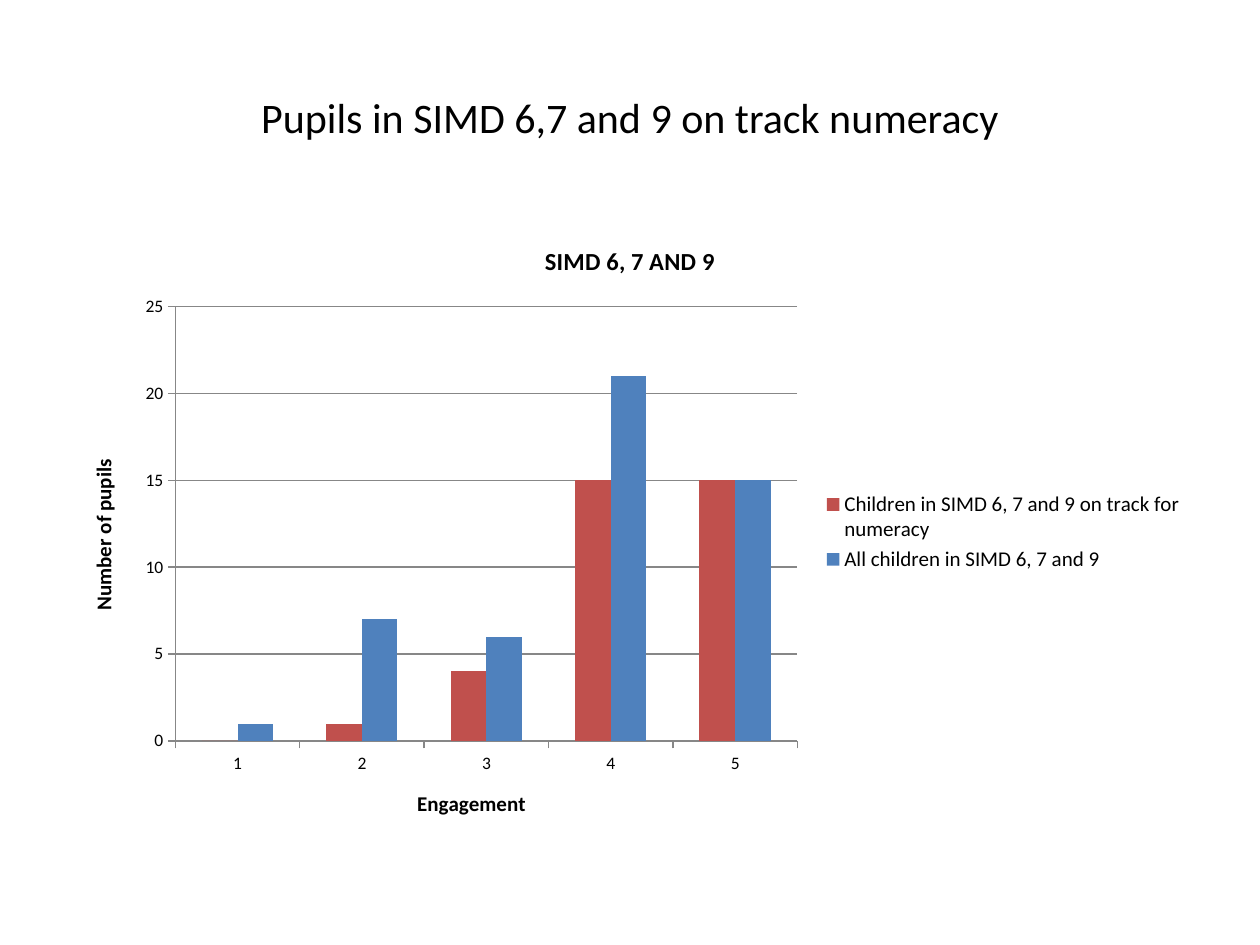
from pptx import Presentation
from pptx.chart.data import CategoryChartData
from pptx.dml.color import RGBColor
from pptx.enum.chart import XL_CHART_TYPE, XL_LEGEND_POSITION, XL_TICK_MARK
from pptx.enum.text import MSO_ANCHOR, PP_ALIGN
from pptx.util import Pt

EMU_PER_PX = 914400 / 126


def px(length):
    return round(length * EMU_PER_PX)


def colour(value):
    return RGBColor.from_string(value)


class SlideBuilder:
    face = "Calibri"
    ink = "000000"
    rule = "878787"

    def __init__(self, presentation):
        self.slide = presentation.slides.add_slide(presentation.slide_layouts[5])

    def style(self, font, size, bold=False):
        font.name = self.face
        font.size = Pt(size)
        font.bold = bold
        font.color.rgb = colour(self.ink)

    def add_text(self, frame, wording, size, bold=False):
        paragraph = frame.paragraphs[0]
        run = paragraph.add_run()
        run.text = wording
        self.style(run.font, size, bold)
        return paragraph

    def title(self, wording, left, top, width, height, size):
        heading = self.slide.shapes.title
        heading.left, heading.top = px(left), px(top)
        heading.width, heading.height = px(width), px(height)
        heading.text_frame.vertical_anchor = MSO_ANCHOR.MIDDLE
        self.add_text(heading.text_frame, wording, size).alignment = PP_ALIGN.CENTER

    def axis(self, axis, wording):
        self.add_text(axis.axis_title.text_frame, wording, 12, True)
        self.style(axis.tick_labels.font, 10)
        axis.major_tick_mark = XL_TICK_MARK.OUTSIDE
        axis.minor_tick_mark = XL_TICK_MARK.NONE
        self.line(axis.format.line)

    def line(self, line):
        line.color.rgb = colour(self.rule)
        line.width = Pt(0.75)

    def column_chart(self, heading, categories, series, axis_titles, left, top, width, height):
        data = CategoryChartData(number_format="General")
        data.categories = categories
        for name, counts, _ in series:
            data.add_series(name, counts)
        chart = self.slide.shapes.add_chart(
            XL_CHART_TYPE.COLUMN_CLUSTERED, px(left), px(top), px(width), px(height), data
        ).chart
        self.style(chart.font, 10)
        chart.has_title = True
        self.add_text(chart.chart_title.text_frame, heading, 14, True)
        chart.chart_title.include_in_layout = False
        chart.has_legend = True
        chart.legend.position = XL_LEGEND_POSITION.RIGHT
        chart.legend.include_in_layout = False
        self.style(chart.legend.font, 12)
        for axis, wording in zip((chart.category_axis, chart.value_axis), axis_titles):
            self.axis(axis, wording)
        chart.value_axis.minimum_scale = 0
        chart.value_axis.maximum_scale = 25
        chart.value_axis.major_unit = 5
        chart.value_axis.has_major_gridlines = True
        self.line(chart.value_axis.major_gridlines.format.line)
        plot = chart.plots[0]
        plot.gap_width = 150
        plot.overlap = 0
        plot.vary_by_categories = False
        for columns, (_, _, fill) in zip(plot.series, series):
            columns.invert_if_negative = False
            columns.format.fill.solid()
            columns.format.fill.fore_color.rgb = colour(fill)


def main():
    presentation = Presentation()
    presentation.slide_width, presentation.slide_height = px(1260), px(945)
    builder = SlideBuilder(presentation)
    margin, content_width = 63, 1134
    builder.title("Pupils in SIMD 6,7 and 9 on track numeracy", margin, 38, content_width, 158, 24)
    pupil_groups = [
        ("Children in SIMD 6, 7 and 9 on track for numeracy", (0, 1, 4, 15, 15), "C0504D"),
        ("All children in SIMD 6, 7 and 9", (1, 7, 6, 21, 15), "4F81BD"),
    ]
    builder.column_chart(
        "SIMD 6, 7 AND 9",
        ["1", "2", "3", "4", "5"],
        pupil_groups,
        ("Engagement", "Number of pupils"),
        margin, 220, content_width, 624,
    )
    presentation.save("out.pptx")


if __name__ == "__main__":
    main()
